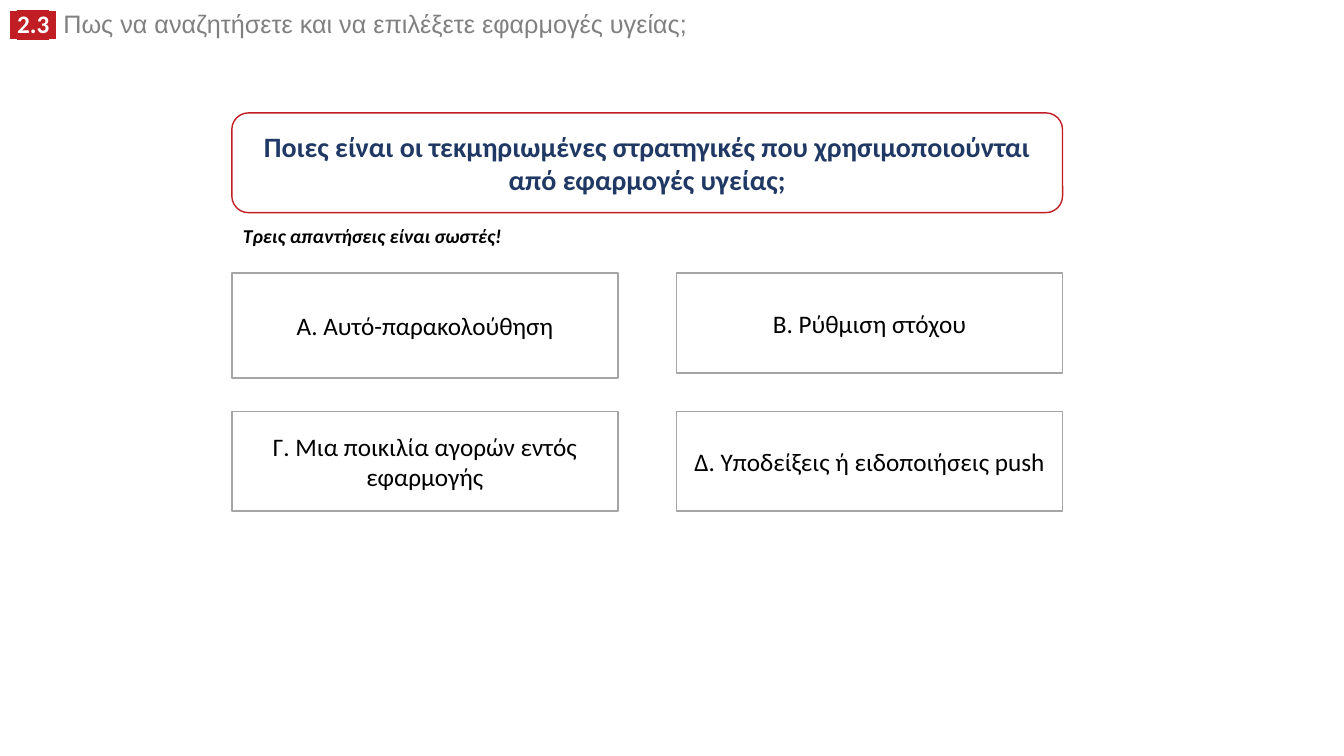
from dataclasses import dataclass

from pptx import Presentation
from pptx.dml.color import RGBColor
from pptx.enum.shapes import MSO_SHAPE as Shape
from pptx.enum.text import MSO_ANCHOR as Anchor, MSO_AUTO_SIZE as AutoSize, PP_ALIGN as Align
from pptx.oxml.ns import qn
from pptx.util import Inches, Pt
from lxml.etree import Element, SubElement


@dataclass(frozen=True)
class Theme:
    red: str = "C01E24"
    navy: str = "203864"
    gray: str = "808080"
    border: str = "A5A5A5"
    black: str = "000000"
    white: str = "FFFFFF"
    title_font: str = "Arial"
    body_font: str = "Calibri"
    question_size: int = 20
    body_size: int = 18
    note_size: int = 14


# Grid of answers, in percent of the slide's width and height
LEFT, COLUMN_WIDTH, COLUMN_STEP = 17.25, 28.73, 33.08
TOP, ROW_HEIGHT, ROW_STEP = 36.13, 13.2, 18.27


class QuizSlide:
    def __init__(self, presentation, theme):
        self.theme = theme
        self.width = presentation.slide_width
        self.height = presentation.slide_height
        self.slide = presentation.slides.add_slide(presentation.slide_layouts[5])

    def area(self, left, top, width, height):
        """Turn percentages of the slide into lengths."""
        return [int(share * side / 100) for share, side in
                ((left, self.width), (top, self.height), (width, self.width), (height, self.height))]

    def run(self, paragraph, text, color, size, name=None, **format_values):
        run = paragraph.add_run()
        run.text = text
        values = {"size": Pt(size), "name": name or self.theme.body_font, **format_values}
        for attribute, value in values.items():
            setattr(run.font, attribute, value)
        run.font.color.rgb = RGBColor.from_string(color)
        return run

    def highlight(self, run, color):
        mark = Element(qn("a:highlight"))
        SubElement(mark, qn("a:srgbClr"), val=color)
        run.font._element.find(qn("a:solidFill")).addnext(mark)

    def title(self, number, text, *area):
        theme = self.theme
        title = self.slide.shapes.title
        title.left, title.top, title.width, title.height = self.area(*area)
        frame = title.text_frame
        frame.word_wrap, frame.auto_size = True, AutoSize.SHAPE_TO_FIT_TEXT
        frame.vertical_anchor = Anchor.TOP
        paragraph = frame.paragraphs[0]
        paragraph.alignment, paragraph.line_spacing = Align.LEFT, 0.8
        # Number badge, padded by a highlighted space on each side
        for part, font in ((" ", theme.title_font), (number, theme.body_font), (" ", theme.title_font)):
            run = self.run(paragraph, part, theme.white, theme.body_size, font, bold=True)
            self.highlight(run, theme.red)
        self.run(paragraph, f" {text}", theme.gray, theme.body_size, theme.title_font, bold=False)

    def box(self, kind, text, area, line, color, size, **format_values):
        shape = self.slide.shapes.add_shape(kind, *self.area(*area))
        shape.shadow.inherit = False
        shape.fill.solid()
        shape.fill.fore_color.rgb = RGBColor.from_string(self.theme.white)
        shape.line.color.rgb = RGBColor.from_string(line)
        shape.line.width = Pt(1)
        frame = shape.text_frame
        frame.word_wrap, frame.vertical_anchor = True, Anchor.MIDDLE
        paragraph = frame.paragraphs[0]
        paragraph.alignment = Align.CENTER
        self.run(paragraph, text, color, size, **format_values)

    def question(self, text, *area):
        theme = self.theme
        self.box(Shape.ROUNDED_RECTANGLE, text, area, theme.red, theme.navy, theme.question_size, bold=True)

    def answer(self, text, column, row, height=ROW_HEIGHT):
        theme = self.theme
        area = LEFT + column * COLUMN_STEP, TOP + row * ROW_STEP, COLUMN_WIDTH, height
        self.box(Shape.RECTANGLE, text, area, theme.border, theme.black, theme.body_size)

    def note(self, text, *area):
        frame = self.slide.shapes.add_textbox(*self.area(*area)).text_frame
        frame.word_wrap, frame.auto_size = False, AutoSize.SHAPE_TO_FIT_TEXT
        self.run(frame.paragraphs[0], text, self.theme.black, self.theme.note_size, bold=True, italic=True)


def main():
    presentation = Presentation()
    presentation.slide_width, presentation.slide_height = Inches(13.33), Inches(7.5)
    quiz = QuizSlide(presentation, Theme())

    # Heading
    quiz.title("2.3", "Πως να αναζητήσετε και να επιλέξετε εφαρμογές υγείας;", 0, 1.2, 71.42, 4.67)

    # Question and hint
    quiz.question("Ποιες είναι οι τεκμηριωμένες στρατηγικές που χρησιμοποιούνται από εφαρμογές υγείας;",
                  LEFT, 14.93, COLUMN_STEP + COLUMN_WIDTH, ROW_HEIGHT)
    quiz.note("Τρεις απαντήσεις είναι σωστές!", 17.33, 28.93, 20.86, 4.53)

    # Answers; the first box is slightly taller
    quiz.answer("A. Αυτό-παρακολούθηση", 0, 0, height=13.87)
    quiz.answer("B. Ρύθμιση στόχου", 1, 0)
    quiz.answer("Γ. Μια ποικιλία αγορών εντός εφαρμογής", 0, 1)
    quiz.answer("Δ. Υποδείξεις ή ειδοποιήσεις push", 1, 1)

    presentation.save("out.pptx")


if __name__ == "__main__":
    main()
